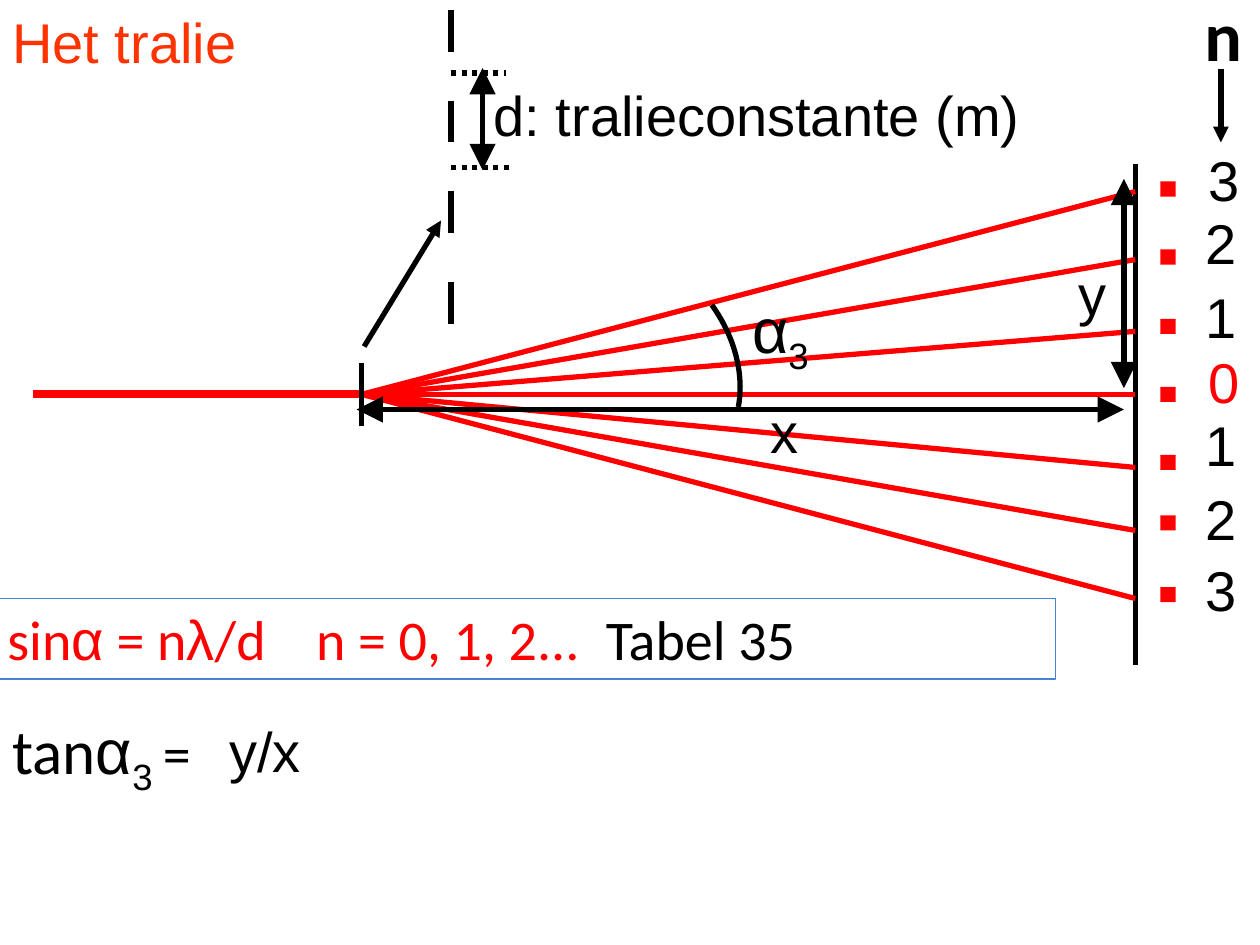
from dataclasses import dataclass

from lxml import etree
from pptx import Presentation
from pptx.dml.color import RGBColor
from pptx.enum.dml import MSO_LINE
from pptx.enum.shapes import MSO_CONNECTOR, MSO_SHAPE
from pptx.enum.text import MSO_ANCHOR
from pptx.oxml.ns import qn
from pptx.util import Inches, Pt

STRAIGHT = MSO_CONNECTOR.STRAIGHT
RECT = MSO_SHAPE.RECTANGLE
DOTTED = MSO_LINE.ROUND_DOT
MIDDLE = MSO_ANCHOR.MIDDLE
TOP = MSO_ANCHOR.TOP


@dataclass(frozen=True)
class Theme:
    black: str = "000000"
    white: str = "FFFFFF"
    red: str = "FF0000"
    title: str = "FF3300"
    frame: str = "4584D3"
    sans: str = "Arial"
    body: str = "Calibri"
    size: int = 32
    large: int = 36
    head: int = 40
    line: float = 3
    ray: float = 4.5


T = Theme()

# Per order: number, beam end, spot top, label left and label top,
# measured from the point where the beams leave the grating
ORDERS = [
    ("3", -1.61, -1.69, 6.62, -2.02),
    ("2", -1.07, -1.15, 6.6, -1.52),
    ("1", -0.5, -0.6, 6.6, -0.94),
    ("0", 0, -0.06, 6.62, -0.42),
    ("1", 0.58, 0.48, 6.6, 0.08),
    ("2", 1.08, 0.96, 6.6, 0.67),
    ("3", 1.62, 1.53, 6.6, 1.23),
]


def rgb(code):
    return RGBColor.from_string(code)


def write(shape, text, size=T.size, font=T.sans, color=T.black, bold=False,
          anchor=TOP, tabs=()):
    """Text is a string, or a list of (string, changes) runs."""
    frame = shape.text_frame
    frame.word_wrap = True
    frame.vertical_anchor = anchor
    para = frame.paragraphs[0]
    runs = [(text, {})] if isinstance(text, str) else text
    for part, change in runs:
        run = para.add_run()
        run.text = part
        face = run.font
        face.size = Pt(change.get("size", size))
        face.name = change.get("font", font)
        face.bold = bold
        face.color.rgb = rgb(change.get("color", color))
        if change.get("sub"):
            face._element.set("baseline", "-25000")
    if tabs:
        stops = etree.SubElement(para._p.get_or_add_pPr(), qn("a:tabLst"))
        for pos in tabs:
            etree.SubElement(stops, qn("a:tab"), pos=str(Inches(pos)), algn="l")


def label(slide, text, x, y, w, h=0.64, **style):
    box = slide.shapes.add_textbox(Inches(x), Inches(y), Inches(w), Inches(h))
    write(box, text, **style)


def line(slide, x1, y1, x2, y2, color=T.black, width=T.line, dash=None,
         ends=(), grade="med"):
    """Ends names the arrowheads: headEnd, tailEnd or both."""
    item = slide.shapes.add_connector(
        STRAIGHT, Inches(x1), Inches(y1), Inches(x2), Inches(y2))
    item.line.color.rgb = rgb(color)
    item.line.width = Pt(width)
    if dash:
        item.line.dash_style = dash
    props = item._element.spPr
    for end in ends:
        etree.SubElement(props.find(qn("a:ln")), qn("a:" + end),
                         type="triangle", w=grade, len=grade)
    etree.SubElement(props, qn("a:effectLst"))


def span(slide, x1, y1, x2, y2):
    line(slide, x1, y1, x2, y2, ends=("headEnd", "tailEnd"), grade="lg")


def block(slide, x, y, w, h, fill=None, edge=None, width=T.line):
    item = slide.shapes.add_shape(
        RECT, Inches(x), Inches(y), Inches(w), Inches(h))
    item.shadow.inherit = False
    if fill:
        item.fill.solid()
        item.fill.fore_color.rgb = rgb(fill)
    else:
        item.fill.background()
    if edge:
        item.line.color.rgb = rgb(edge)
        item.line.width = Pt(width)
    else:
        item.line.fill.background()
    return item


def bezier(a, b, c, d, steps=12):
    for i in range(1, steps + 1):
        t = i / steps
        s = 1 - t
        yield tuple(s**3 * p + 3 * s * s * t * q + 3 * s * t * t * r + t**3 * u
                    for p, q, r, u in zip(a, b, c, d))


def arc(slide, x, y):
    """Angle mark whose upper end lies at x, y."""
    knots = [(0, 0), (0.07, 0.1), (0.13, 0.21), (0.17, 0.33),
             (0.22, 0.48), (0.24, 0.65), (0.21, 0.81)]
    points = [*bezier(*knots[:4]), *bezier(*knots[3:])]
    pen = slide.shapes.build_freeform(Inches(x), Inches(y))
    pen.add_line_segments(
        [(Inches(x + dx), Inches(y + dy)) for dx, dy in points], close=False)
    mark = pen.convert_to_shape()
    mark.shadow.inherit = False
    mark.fill.background()
    mark.line.color.rgb = rgb(T.black)
    mark.line.width = Pt(T.line)


def beams(slide, x, y):
    """Light from the left, split at x, y and caught on the screen."""
    reach = 6.14
    line(slide, x + reach, y - 1.83, x + reach, y + 2.15)
    line(slide, x - 2.61, y, x, y, color=T.red, width=T.ray)
    for order in ORDERS:
        line(slide, x, y, x + reach, y + order[1], color=T.red)
    line(slide, x, y - 0.25, x, y + 0.25)


def orders(slide, x, y):
    block(slide, x + 6.24, y - 2.05, 0.35, 4.17, fill=T.white, edge=T.white)
    for num, _, spot, left, top in ORDERS:
        block(slide, x + 6.34, y + spot, 0.12, 0.12, fill=T.red)
        label(slide, num, x + left, y + top, 0.5,
              color=T.red if num == "0" else T.black)
    label(slide, "n", x + 6.59, y - 3.25, 0.5, 0.77,
          size=T.head, font=T.body, bold=True)
    line(slide, x + 6.82, y - 2.58, x + 6.82, y - 2, ends=("tailEnd",))


def sizes(slide, x, y):
    """Angle, height and distance, measured from the split at x, y."""
    label(slide, [("α", {}), ("3", {"sub": True})], x + 3, y - 0.87,
          0.92, 0.71, size=T.large)
    arc(slide, x + 2.78, y - 0.71)
    span(slide, x + 6.05, y - 1.71, x + 6.05, y - 0.05)
    span(slide, x - 0.04, y + 0.12, x + 6.05, y + 0.12)
    label(slide, "y", x + 5.59, y - 1.12, 0.92)
    label(slide, "x", x + 3.15, y - 0.02, 0.92)


def grating(slide, x, y):
    """Enlarged grating with its top at x, y."""
    for i in range(4):
        top = y + 0.72 * i
        line(slide, x, top, x, top + 0.33)
    line(slide, x - 0.69, y + 2.67, x - 0.08, y + 1.67, ends=("tailEnd",))
    span(slide, x + 0.25, y + 0.46, x + 0.25, y + 1.27)
    for dy, w in ((0.5, 0.44), (1.25, 0.5)):
        line(slide, x, y + dy, x + w, y + dy, dash=DOTTED)
    label(slide, "d: tralieconstante (m)", x + 0.24, y + 0.51, 4.76)


def rules(slide, x, y):
    """Framed grating formula with the tangent below it."""
    sans = {"font": T.sans}
    box = block(slide, x - 0.04, y, 8.42, 0.64, edge=T.frame, width=0.75)
    write(box, [("sin", {}), ("α", sans), (" = n", {}), ("λ", sans),
                ("/d\tn = 0, 1, 2...\t", {}),
                ("Tabel 35", {"color": T.black})],
          font=T.body, color=T.red, tabs=(2.45, 4.75))
    box.text_frame.paragraphs[0].alignment = 1
    label(slide, [("tan", {}), ("α", sans), ("3 ", {**sans, "sub": True}),
                  ("=", {"size": T.size})],
          x, y + 0.85, 2.33, 0.71, size=T.large, font=T.body)
    label(slide, "y/x", x + 1.72, y + 0.89, 2.33)


def main():
    deck = Presentation()
    deck.slide_width, deck.slide_height = Inches(10), Inches(7.5)
    slide = deck.slides.add_slide(deck.slide_layouts[6])
    label(slide, "Het tralie", 0, 0, 9.46, 0.65, color=T.title, anchor=MIDDLE)
    beams(slide, 2.87, 3.13)
    rules(slide, 0, 4.75)
    sizes(slide, 2.87, 3.13)
    grating(slide, 3.58, 0.08)
    orders(slide, 2.87, 3.13)
    deck.save("out.pptx")


if __name__ == "__main__":
    main()
